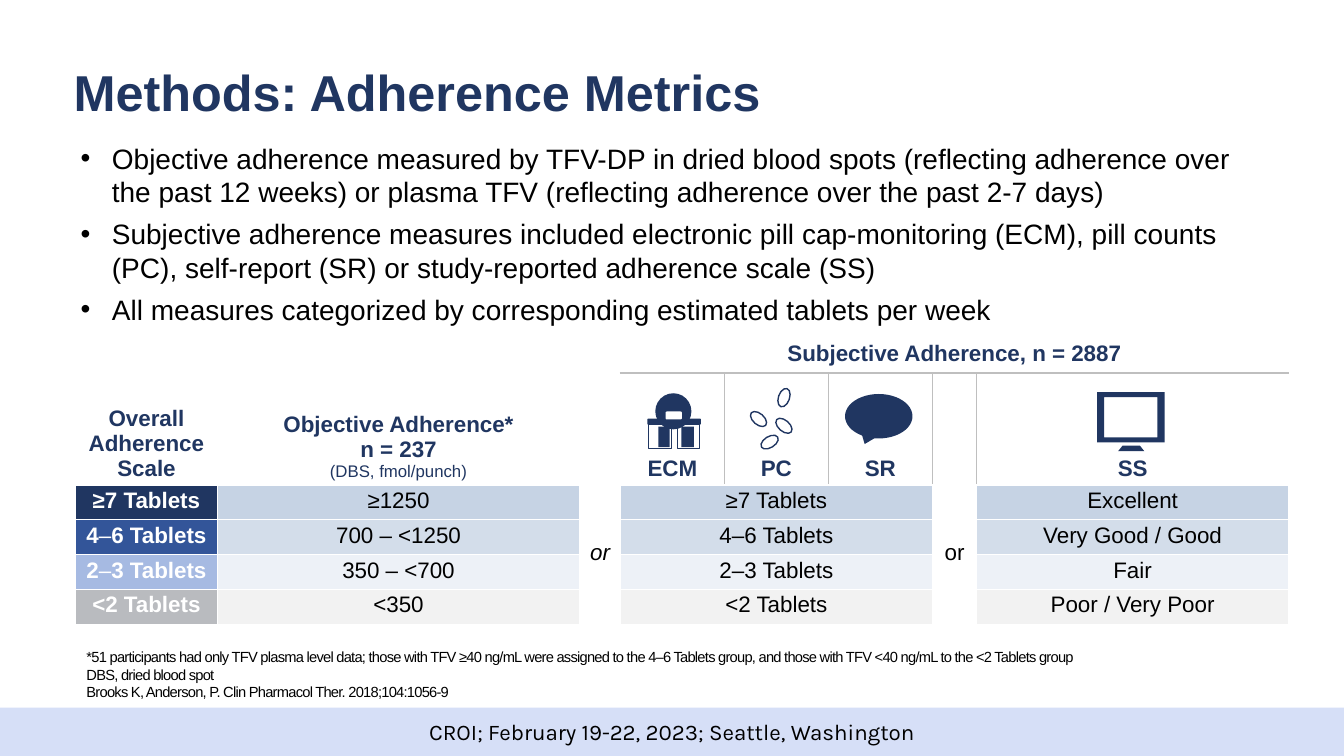
from pptx import Presentation, util as u
from pptx.dml.color import RGBColor
from pptx.enum import shapes, text
from pptx.oxml.ns import qn
from lxml import etree

NAVY = RGBColor(0x20, 0x36, 0x61)
BLACK = RGBColor(0, 0, 0)
WHITE = RGBColor(255, 255, 255)
GREY = RGBColor(0xBF, 0xBF, 0xBF)
FOOTER_BLUE = RGBColor(0xD6, 0xDF, 0xF7)
SCALE_FILLS = [RGBColor(0x20, 0x36, 0x61), RGBColor(0x33, 0x55, 0x99),
               RGBColor(0xA6, 0xBA, 0xE2), RGBColor(0xB9, 0xBB, 0xBF)]
VALUE_FILLS = [RGBColor(0xC6, 0xD3, 0xE4), RGBColor(0xD3, 0xDD, 0xEA),
               RGBColor(0xED, 0xF1, 0xF7), RGBColor(0xF2, 0xF2, 0xF2)]
PRESET = shapes.MSO_SHAPE
MIDDLE, BOTTOM = text.MSO_ANCHOR.MIDDLE, text.MSO_ANCHOR.BOTTOM
CENTER = text.PP_ALIGN.CENTER

COLUMNS = [3.56, 9.14, 1.02, 2.62, 2.62, 2.62, 1.12, 7.85]
ROWS = [0.87, 2.82] + [0.88] * 4
VALUES = [
    ("≥7 Tablets", "≥1250", "Excellent"),
    ("4–6 Tablets", "700 – <1250", "Very Good / Good"),
    ("2–3 Tablets", "350 – <700", "Fair"),
    ("<2 Tablets", "<350", "Poor / Very Poor"),
]
BULLETS = [
    "Objective adherence measured by TFV-DP in dried blood spots (reflecting adherence over "
    "the past 12 weeks) or plasma TFV (reflecting adherence over the past\u00a02-7 days)",
    "Subjective adherence measures included electronic pill cap-monitoring (ECM), pill counts "
    "(PC), self-report (SR) or study-reported adherence scale (SS)",
    "All measures categorized by corresponding estimated tablets per week",
]
NOTES = [
    "*51 participants had only TFV plasma level data; those with TFV ≥40 ng/mL were assigned "
    "to the 4–6 Tablets group, and those with TFV <40 ng/mL to the <2 Tablets group",
    "DBS, dried blood spot",
    "Brooks K, Anderson, P. Clin Pharmacol Ther. 2018;104:1056-9",
]


def add_span(para, words, size=16, color=BLACK, bold=False, italic=False,
             font="Arial", spacing=None):
    span = para.add_run()
    span.text = words
    span.font.name = font
    span.font.size = u.Pt(size)
    span.font.color.rgb = color
    span.font.bold = bold
    span.font.italic = italic
    if spacing is not None:
        span._r.get_or_add_rPr().set("spc", str(int(spacing * 100)))


def next_para(frame, index, align=None):
    para = frame.add_paragraph() if index else frame.paragraphs[0]
    para.alignment = align
    return para


def add_preset(page, preset, left, top, width, height, fill=NAVY, line=None):
    shape = page.shapes.add_shape(preset, *map(u.Cm, (left, top, width, height)))
    shape.shadow.inherit = False
    if fill is None:
        shape.fill.background()
    else:
        shape.fill.solid()
        shape.fill.fore_color.rgb = fill
    if line is None:
        shape.line.fill.background()
    else:
        shape.line.color.rgb = NAVY
        shape.line.width = u.Pt(line)
    return shape


def add_text_box(page, left, top, width, height):
    frame = page.shapes.add_textbox(*map(u.Cm, (left, top, width, height))).text_frame
    frame.word_wrap = True
    return frame


def build_footer(page, left, top, width, height):
    bar = add_preset(page, PRESET.RECTANGLE, left, top, width, height, FOOTER_BLUE)
    bar.text_frame.vertical_anchor = MIDDLE
    para = next_para(bar.text_frame, 0, CENTER)
    add_span(para, "CROI; February 19-22, 2023; Seattle, Washington", font="Karla")


def build_title(page, left, top, width, height):
    title = page.shapes.title
    title.left, title.top, title.width, title.height = map(u.Cm, (left, top, width, height))
    title.text_frame.vertical_anchor = MIDDLE
    para = next_para(title.text_frame, 0, text.PP_ALIGN.LEFT)
    para.line_spacing = 0.9
    add_span(para, "Methods: Adherence Metrics", size=36, color=NAVY, bold=True)


def build_bullets(page, left, top, width, height):
    frame = add_text_box(page, left, top, width, height)
    for index, words in enumerate(BULLETS):
        para = next_para(frame, index)
        para.space_before = u.Pt(6)
        add_span(para, words, size=20)
        properties = para._p.get_or_add_pPr()
        properties.set("marL", str(u.Cm(0.79)))
        properties.set("indent", str(-u.Cm(0.79)))
        etree.SubElement(properties, qn("a:buFont"), typeface="Arial")
        etree.SubElement(properties, qn("a:buChar"), char="•")


def build_notes(page, left, top, width, height):
    frame = add_text_box(page, left, top, width, height)
    frame.vertical_anchor = BOTTOM
    frame.margin_left = u.Cm(0.25)
    frame.margin_top = frame.margin_right = frame.margin_bottom = 0
    for index, words in enumerate(NOTES):
        add_span(next_para(frame, index), words, size=10.5, spacing=-0.5)


def set_borders(cell, grey_sides):
    properties = cell._tc.get_or_add_tcPr()
    for side in "LRTB":
        line = etree.SubElement(properties, qn("a:ln" + side), w=str(u.Pt(1)))
        solid = etree.SubElement(line, qn("a:solidFill"))
        color = GREY if side in grey_sides else WHITE
        etree.SubElement(solid, qn("a:srgbClr"), val=str(color))


def grey_sides(row, column):
    if row == 0 and column >= 3:
        return "B"
    if row == 1 and column >= 3:
        return "T" + ("L" if column > 3 else "") + ("R" if column < 7 else "")
    return ""


def fill_cell(cell, lines, fill=None, anchor=MIDDLE, **style):
    cell.vertical_anchor = anchor
    if fill is not None:
        cell.fill.solid()
        cell.fill.fore_color.rgb = fill
    for index, words in enumerate(lines):
        add_span(next_para(cell.text_frame, index, CENTER), words, **style)


def build_table(page, left, top):
    table = page.shapes.add_table(
        len(ROWS), len(COLUMNS), *map(u.Cm, (left, top, sum(COLUMNS), sum(ROWS)))).table
    table.first_row = table.horz_banding = False
    for column, width in zip(table.columns, COLUMNS):
        column.width = u.Cm(width)
    for row, height in zip(table.rows, ROWS):
        row.height = u.Cm(height)
    for row in range(len(ROWS)):
        for column in range(len(COLUMNS)):
            cell = table.cell(row, column)
            cell.margin_top, cell.margin_bottom = 0, u.Cm(0.1)
            set_borders(cell, grey_sides(row, column))
            cell.fill.background()

    for column in range(3):
        table.cell(0, column).merge(table.cell(1, column))
    table.cell(0, 3).merge(table.cell(0, 7))
    for column in (2, 6):
        table.cell(2, column).merge(table.cell(5, column))

    heading = dict(color=NAVY, bold=True)
    fill_cell(table.cell(0, 0), ["Overall", "Adherence Scale"], anchor=BOTTOM, **heading)
    objective = table.cell(0, 1)
    fill_cell(objective, ["Objective Adherence*", "n = 237"], anchor=BOTTOM, **heading)
    add_span(next_para(objective.text_frame, 2, CENTER), "(DBS, fmol/punch)",
             size=12, color=NAVY)
    fill_cell(table.cell(0, 3), ["Subjective Adherence, n = 2887"], **heading)
    for column, words in {3: "ECM", 4: "PC", 5: "SR", 7: "SS"}.items():
        fill_cell(table.cell(1, column), [words], anchor=BOTTOM, **heading)
    fill_cell(table.cell(2, 2), ["or"], WHITE, italic=True)
    fill_cell(table.cell(2, 6), ["or"], WHITE)

    for row, (scale, objective, study) in enumerate(VALUES, 2):
        value_fill = VALUE_FILLS[row - 2]
        table.cell(row, 3).merge(table.cell(row, 5))
        for column, words in {1: objective, 3: scale, 7: study}.items():
            fill_cell(table.cell(row, column), [words], value_fill)
        cell = table.cell(row, 0)
        fill_cell(cell, [], SCALE_FILLS[row - 2])
        para = next_para(cell.text_frame, 0, CENTER)
        for part in scale.partition("–"):
            if part:
                add_span(para, part, color=WHITE, bold=part != "–")


def build_pill_caps(page, left, top):
    for offset, label_offset, label_width in ((0, 0.28, 0.28), (0.71, 0.15, 0.31)):
        bottle = left + offset
        add_preset(page, PRESET.RECTANGLE, bottle + 0.04, top + 0.79, 0.56, 0.6, WHITE, 0.75)
        add_preset(page, PRESET.RECTANGLE, bottle + label_offset, top + 0.84, label_width, 0.52)
        add_preset(page, PRESET.ROUNDED_RECTANGLE, bottle, top + 0.64, 0.64, 0.15)
    add_preset(page, PRESET.OVAL, left + 0.2, top, 0.91, 0.91)
    add_preset(page, PRESET.ROUNDED_RECTANGLE, left + 0.46, top + 0.46, 0.41, 0.2, WHITE)


def build_pills(page, left, top):
    for x, y, angle in ((0.28, 1.32, 328.4), (0.64, 0.91, 40.8), (0, 0.74, 40.8), (0.64, 0.2, 109)):
        pill = add_preset(page, PRESET.OVAL, left + x, top + y, 0.48, 0.28, None, 1)
        pill.rotation = angle


def build_monitor(page, left, top, width, height):
    def corners(x, y):
        right, bottom = left + width - x, top + height - y
        return [(u.Cm(a), u.Cm(b)) for a, b in (
            (left + x, top + y), (right, top + y), (right, bottom), (left + x, bottom))]

    outer, inner = corners(0, 0), corners(0.18, 0.13)[::-1]
    builder = page.shapes.build_freeform(*outer[0])
    builder.add_line_segments(outer[1:], close=True)
    builder.move_to(*inner[0])
    builder.add_line_segments(inner[1:], close=True)
    frame = builder.convert_to_shape()
    frame.shadow.inherit = False
    frame.fill.solid()
    frame.fill.fore_color.rgb = NAVY
    frame.line.fill.background()
    add_preset(page, PRESET.TRAPEZOID, left + 0.53, top + 1.35, 0.66, 0.14).adjustments[0] = 0.8


def build_methods(deck):
    page = deck.slides.add_slide(deck.slide_layouts[5])
    build_footer(page, 0, 17.83, 33.86, 1.22)
    build_title(page, 1.6, 1.02, 30.48, 2.74)
    build_bullets(page, 1.78, 3.43, 30.53, 7.26)
    build_notes(page, 1.93, 16.31, 30.48, 1.35)
    build_table(page, 1.91, 8.53)
    build_pill_caps(page, 16.31, 9.91)
    build_pills(page, 18.87, 9.68)
    add_preset(page, PRESET.OVAL_CALLOUT, 21.29, 9.93, 1.7, 1.12)
    build_monitor(page, 27.64, 9.88, 1.7, 1.27)


def main():
    deck = Presentation()
    deck.slide_width, deck.slide_height = u.Cm(33.86), u.Cm(19.05)
    build_methods(deck)
    deck.save("out.pptx")


if __name__ == "__main__":
    main()
